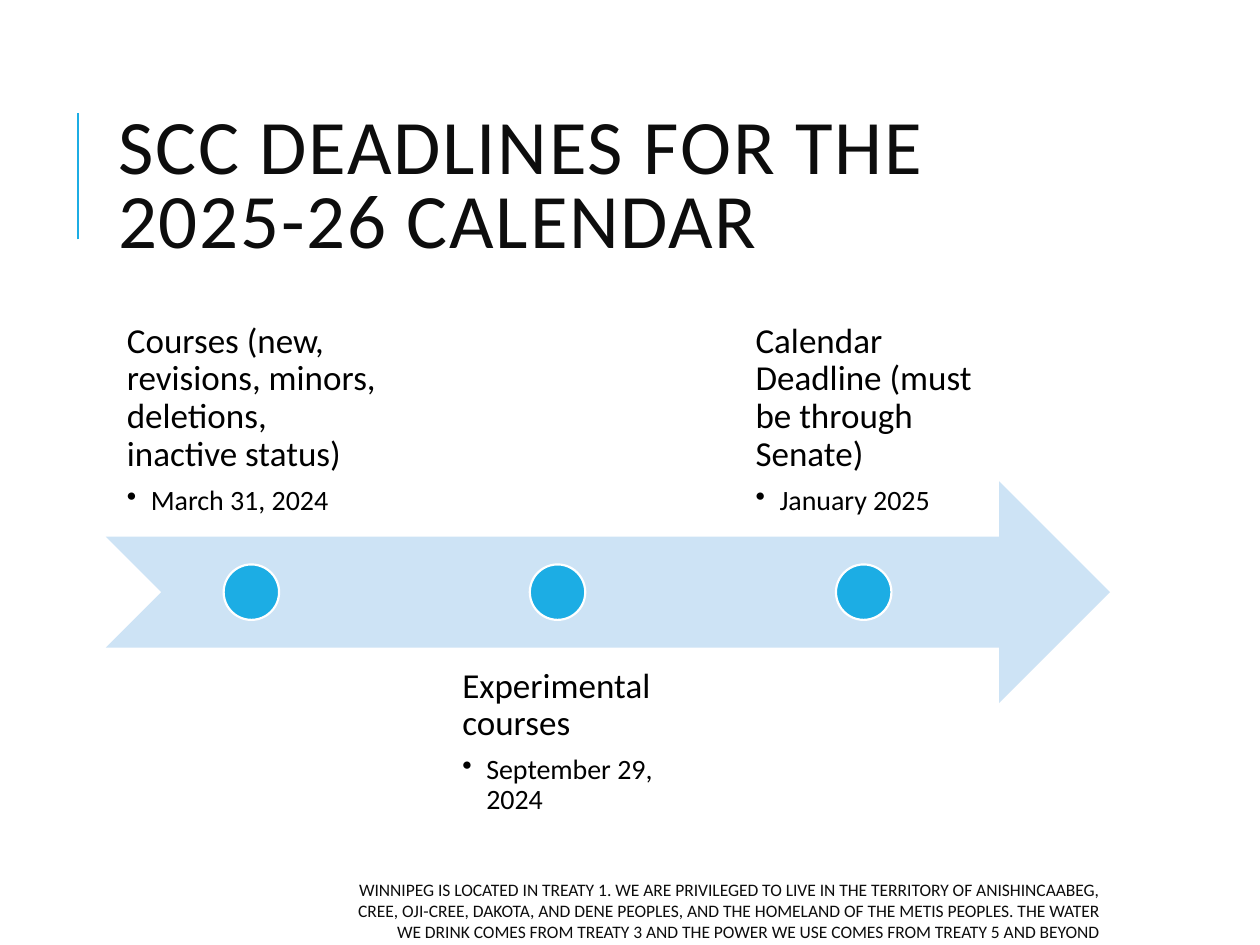
from lxml import etree
from pptx import Presentation
from pptx.dml.color import RGBColor
from pptx.enum import shapes, text
from pptx.oxml.ns import qn
from pptx.util import Inches, Pt

BLUE = RGBColor(0x1C, 0xAD, 0xE4)
PALE_BLUE = RGBColor(0xCD, 0xE3, 0xF5)
WHITE = RGBColor(0xFF, 0xFF, 0xFF)
BLACK = RGBColor(0, 0, 0)
DARK = RGBColor(0x0D, 0x0D, 0x0D)
FONT = "Calibri"

TITLE = "SCC DEADLINES FOR THE 2025-26 CALENDAR"
MILESTONES = [
    ("Courses (new, revisions, minors, deletions, inactive status)", "March 31, 2024"),
    ("Experimental courses", "September 29, 2024"),
    ("Calendar Deadline (must be through Senate)", "January 2025"),
]
FOOTER = (
    "WINNIPEG IS LOCATED IN TREATY 1. WE ARE PRIVILEGED TO LIVE IN THE TERRITORY OF "
    "ANISHINCAABEG, CREE, OJI-CREE, DAKOTA, AND DENE PEOPLES, AND THE HOMELAND OF THE "
    "METIS PEOPLES. THE WATER WE DRINK COMES FROM TREATY 3 AND THE POWER WE USE COMES "
    "FROM TREATY 5 AND BEYOND"
)


def add_frame(slide, box, anchor, inset=None):
    """Add a wrapping text box and return its text frame."""
    tf = slide.shapes.add_textbox(*box).text_frame
    tf.word_wrap = True
    tf.vertical_anchor = anchor
    if inset is not None:
        tf.margin_left = tf.margin_top = tf.margin_right = tf.margin_bottom = inset
    return tf


def write(p, words, size, color=BLACK, spacing=None, after=None, align=None,
          tracking=None, bullet_indent=None):
    """Write one formatted run into a paragraph."""
    r = p.add_run()
    r.text = words
    r.font.size, r.font.name = Pt(size), FONT
    r.font.color.rgb = color
    p.alignment = align
    p.line_spacing = spacing
    if after is not None:
        p.space_after = Pt(after)
    if tracking is not None:
        r.font._element.set("spc", str(tracking))
    if bullet_indent is not None:
        pPr = p._p.get_or_add_pPr()
        pPr.set("marL", str(bullet_indent))
        pPr.set("indent", str(-bullet_indent))
        etree.SubElement(pPr, qn("a:buChar")).set("char", "•")


def add_preset(slide, kind, box, fill, line=None):
    """Add a flat preset shape with an optional outline."""
    sp = slide.shapes.add_shape(kind, *box)
    sp.shadow.inherit = False
    sp.fill.solid()
    sp.fill.fore_color.rgb = fill
    if line is None:
        sp.line.fill.background()
    else:
        sp.line.color.rgb = line
        sp.line.width = Pt(1.25)


def add_title(slide, left, top, width, height):
    """Place the title and the accent rule to its left."""
    x, y = left - Inches(0.22), top + Inches(0.22)
    rule = slide.shapes.add_connector(
        shapes.MSO_CONNECTOR.STRAIGHT, x, y + Inches(1), x, y)
    rule.line.color.rgb = BLUE
    rule.line.width = Pt(1.5)
    etree.SubElement(rule._element.spPr, qn("a:effectLst"))
    tf = add_frame(slide, (left, top, width, height), text.MSO_ANCHOR.MIDDLE)
    write(tf.paragraphs[0], TITLE, 44, DARK, spacing=0.8, tracking=100)


def add_milestone(slide, left, top, width, height, label, date, above):
    """Place one label with its bulleted date, on either side of the arrow."""
    anchor = text.MSO_ANCHOR.BOTTOM if above else text.MSO_ANCHOR.TOP
    tf = add_frame(slide, (left, top, width, height), anchor, Inches(0.16))
    tf._txBody.bodyPr.set("anchorCtr", "1")
    write(tf.paragraphs[0], label, 20, spacing=0.9, after=7)
    p = tf.add_paragraph()
    p.level = 1
    write(p, date, 16, spacing=0.9, after=2.4, bullet_indent=Inches(0.19))


def add_timeline(slide, left, top, width, height):
    """Place the arrow, its dots and labels alternating above and below."""
    band = int(height * 0.4)
    add_preset(slide, shapes.MSO_SHAPE.NOTCHED_RIGHT_ARROW,
               (left, top + int(height * 0.3), width, band), PALE_BLUE)
    label_width, pitch, dot = Inches(2.31), Inches(2.43), Inches(0.44)
    for i, (label, date) in enumerate(MILESTONES):
        x, above = left + i * pitch, i % 2 == 0
        y = top if above else top + height - band
        add_milestone(slide, x, y, label_width, band, label, date, above)
        add_preset(slide, shapes.MSO_SHAPE.OVAL,
                   (x + (label_width - dot) // 2, top + (height - dot) // 2, dot, dot),
                   BLUE, WHITE)


def add_footer(slide, left, top, width, height):
    """Place the right-aligned land acknowledgement."""
    tf = add_frame(slide, (left, top, width, height), text.MSO_ANCHOR.MIDDLE)
    write(tf.paragraphs[0], FOOTER, 10, DARK, align=text.PP_ALIGN.RIGHT)


def main():
    """Build and save the slide."""
    prs = Presentation()
    prs.slide_width, prs.slide_height = Inches(10), Inches(7.5)
    s = prs.slides.add_slide(prs.slide_layouts[6])
    add_title(s, Inches(0.84), Inches(0.68), Inches(7.97), Inches(1.64))
    add_timeline(s, Inches(0.84), Inches(2.5), Inches(7.97), Inches(4.4))
    add_footer(s, Inches(2.67), Inches(7.08), Inches(6.15), Inches(0.3))
    prs.save("out.pptx")


if __name__ == "__main__":
    main()
